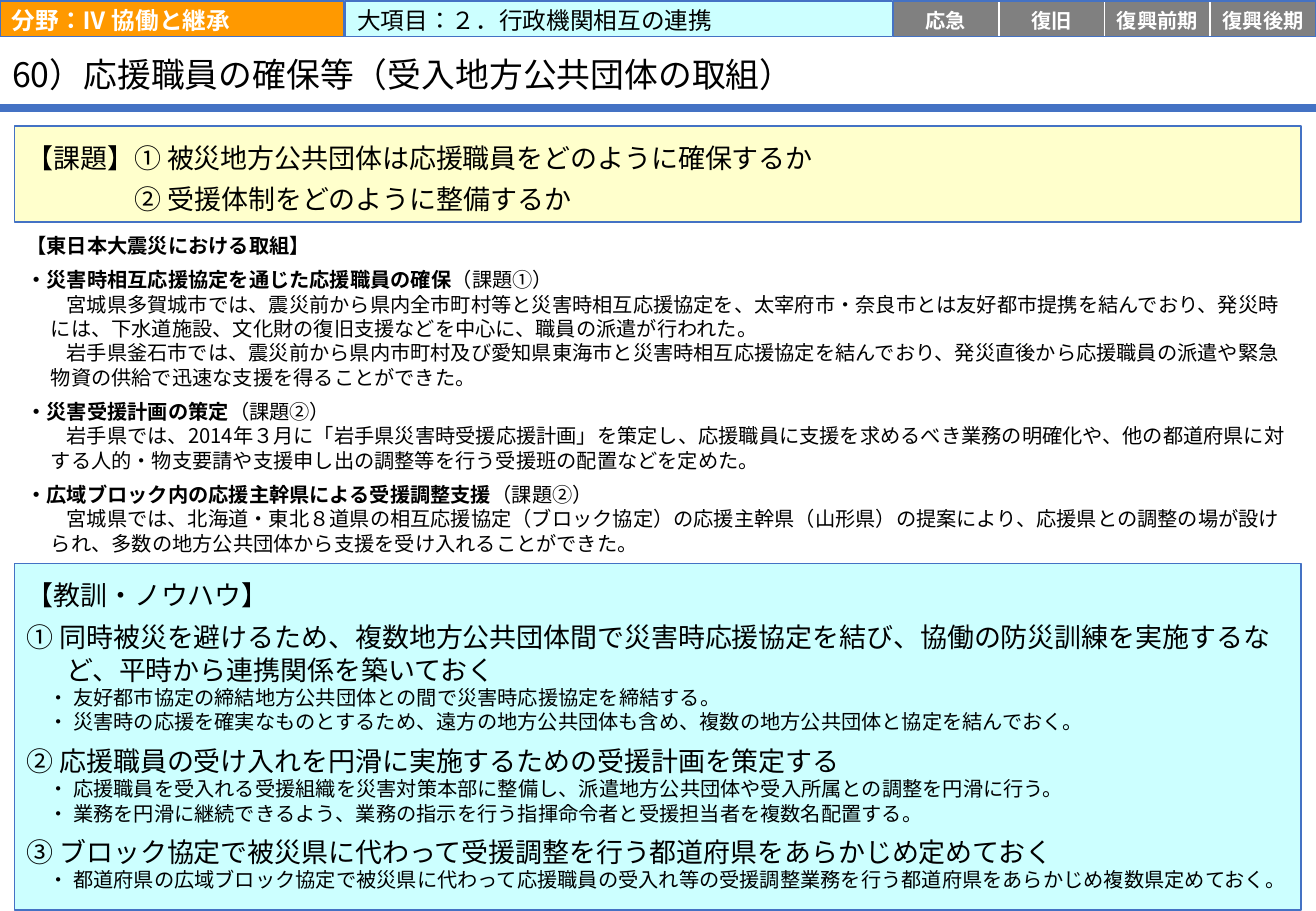
from pptx import Presentation, util as u
from pptx.dml.color import RGBColor
from pptx.enum import lang, shapes, text
from pptx.oxml.ns import qn
from lxml import etree

BLUE = RGBColor(0x44, 0x72, 0xC4)
ORANGE = RGBColor(0xFF, 0x99, 0x00)
CYAN = RGBColor(0xCC, 0xFF, 0xFF)
YELLOW = RGBColor(0xFF, 0xFF, 0xCC)
GRAY = RGBColor(0x80, 0x80, 0x80)
WHITE = RGBColor(0xFF, 0xFF, 0xFF)
BLACK = RGBColor(0, 0, 0)
LATIN, CJK = "Calibri", "Noto Sans CJK JP"

BAR_Y, BAR_H = 0.13, 3.87
BOX_X, BOX_W = 1.11, 97.78
PHASE_X = 67.87
PHASES = ["応急", "復旧", "復興前期", "復興後期"]

ISSUES = [
    ("【課題】① 被災地方公共団体は応援職員をどのように確保するか", 0),
    ("② 受援体制をどのように整備するか", 0.89),
]
EFFORTS = [
    ("・災害時相互応援協定を通じた応援職員の確保", "（課題①）", [
        "宮城県多賀城市では、震災前から県内全市町村等と災害時相互応援協定を、太宰府市・奈良市とは友好都市提携を結んでおり、発災時には、下水道施設、文化財の復旧支援などを中心に、職員の派遣が行われた。",
        "岩手県釜石市では、震災前から県内市町村及び愛知県東海市と災害時相互応援協定を結んでおり、発災直後から応援職員の派遣や緊急物資の供給で迅速な支援を得ることができた。",
    ]),
    ("・災害受援計画の策定", "（課題②）", [
        "岩手県では、2014年３月に「岩手県災害時受援応援計画」を策定し、応援職員に支援を求めるべき業務の明確化や、他の都道府県に対する人的・物支要請や支援申し出の調整等を行う受援班の配置などを定めた。",
    ]),
    ("・広域ブロック内の応援主幹県による受援調整支援", "（課題②）", [
        "宮城県では、北海道・東北８道県の相互応援協定（ブロック協定）の応援主幹県（山形県）の提案により、応援県との調整の場が設けられ、多数の地方公共団体から支援を受け入れることができた。",
    ]),
]
LESSONS = [
    ("① 同時被災を避けるため、複数地方公共団体間で災害時応援協定を結び、協働の防災訓練を実施するなど、平時から連携関係を築いておく", [
        "・ 友好都市協定の締結地方公共団体との間で災害時応援協定を締結する。",
        "・ 災害時の応援を確実なものとするため、遠方の地方公共団体も含め、複数の地方公共団体と協定を結んでおく。",
    ]),
    ("② 応援職員の受け入れを円滑に実施するための受援計画を策定する", [
        "・ 応援職員を受入れる受援組織を災害対策本部に整備し、派遣地方公共団体や受入所属との調整を円滑に行う。",
        "・ 業務を円滑に継続できるよう、業務の指示を行う指揮命令者と受援担当者を複数名配置する。",
    ]),
    ("③ ブロック協定で被災県に代わって受援調整を行う都道府県をあらかじめ定めておく", [
        "・ 都道府県の広域ブロック協定で被災県に代わって応援職員の受入れ等の受援調整業務を行う都道府県をあらかじめ複数県定めておく。",
    ]),
]


class Sheet:
    """Style and current slide, with positions in percent of the slide size."""

    def __init__(self, prs):
        self.prs = prs
        self.s = prs.slides.add_slide(prs.slide_layouts[5])

    def x(self, share):
        return round(self.prs.slide_width * share / 100)

    def y(self, share):
        return round(self.prs.slide_height * share / 100)

    def area(self, x, y, w, h):
        return self.x(x), self.y(y), self.x(w), self.y(h)

    def frame(self, sp, insets, anchor=text.MSO_ANCHOR.MIDDLE):
        tf = sp.text_frame
        tf.word_wrap = True
        tf.auto_size = text.MSO_AUTO_SIZE.NONE
        tf.vertical_anchor = anchor
        tf.margin_left, tf.margin_top, tf.margin_right, tf.margin_bottom = map(u.Inches, insets)
        return tf

    def title(self, words, x, y, w, h):
        sp = self.s.shapes.title
        sp.left, sp.top, sp.width, sp.height = self.area(x, y, w, h)
        tf = self.frame(sp, (0.1, 0.04, 0.1, 0))
        self.para(tf, [words], 20, spacing=0.9)

    def rule(self, y):
        sp = self.s.shapes.add_connector(
            shapes.MSO_CONNECTOR.STRAIGHT, 0, self.y(y), self.x(100), self.y(y))
        sp.line.color.rgb = BLUE
        sp.line.width = u.Pt(4.5)
        etree.SubElement(sp._element.spPr, qn("a:effectLst"))

    def box(self, x, y, w, h, fill=None, line=BLUE, insets=(0.1, 0.05, 0.1, 0.05),
            anchor=text.MSO_ANCHOR.MIDDLE):
        sp = self.s.shapes.add_shape(shapes.MSO_SHAPE.RECTANGLE, *self.area(x, y, w, h))
        sp.shadow.inherit = False
        if fill is None:
            sp.fill.background()
        else:
            sp.fill.solid()
            sp.fill.fore_color.rgb = fill
        if line is None:
            sp.line.fill.background()
        else:
            sp.line.color.rgb = line
            sp.line.width = u.Pt(1)
        return self.frame(sp, insets, anchor)

    def para(self, tf, words, size, font=CJK, color=BLACK, bold=False, align=text.PP_ALIGN.LEFT,
             before=0, spacing=None, left=0, first=0):
        p = tf.paragraphs[0]
        if p.runs:
            p = tf.add_paragraph()
        p.alignment = align
        p.space_before = u.Pt(before)
        if spacing:
            p.line_spacing = spacing
        pPr = p._p.get_or_add_pPr()
        pPr.set("marL", str(u.Inches(left)))
        pPr.set("indent", str(u.Inches(first)))
        p.font.size = u.Pt(size)
        p.font.bold = bold
        p.font.color.rgb = color
        p.font.name = font
        etree.SubElement(pPr.find(qn("a:defRPr")), qn("a:ea"), typeface=CJK)
        for word in words:
            r = p.add_run()
            r.text = word
            r.font.language_id = lang.MSO_LANGUAGE_ID.JAPANESE
        return p

    def label(self, words, x, w, fill, color, size=14, bold=True, line=BLUE, side=0.1,
              align=text.PP_ALIGN.LEFT):
        tf = self.box(x, BAR_Y, w, BAR_H, fill, line, (side, 0.02, side, 0))
        self.para(tf, [words], size, LATIN, color, bold, align)


def main():
    prs = Presentation()
    prs.slide_width, prs.slide_height = u.Inches(10.83), u.Inches(7.5)
    sheet = Sheet(prs)
    sheet.rule(11.87)
    sheet.title("60）応援職員の確保等（受入地方公共団体の取組）", 0, 4.27, 87.53, 7.73)

    tf = sheet.box(BOX_X, 25.07, BOX_W, 36.4, WHITE, None)
    sheet.para(tf, ["【東日本大震災における取組】"], 12, LATIN, bold=True)
    for heading, issue, details in EFFORTS:
        p = sheet.para(tf, [heading, issue], 12, LATIN, bold=True, before=6)
        p.runs[1].font.bold = False
        for detail in details:
            sheet.para(tf, [detail], 12, left=0.2, first=0.13)

    sheet.label("分野：Ⅳ 協働と継承", 0, 26.13, ORANGE, WHITE)
    sheet.label("大項目：２．行政機関相互の連携", 26.22, 41.83, CYAN, BLACK, bold=False)

    tf = sheet.box(BOX_X, 13.87, BOX_W, 10.53, YELLOW, insets=(0.1, 0.12, 0.1, 0.12))
    for issue, left in ISSUES:
        sheet.para(tf, [issue], 16, spacing=u.Pt(24), left=left)

    tf = sheet.box(BOX_X, 61.87, BOX_W, 38, CYAN, insets=(0.1, 0.12, 0.1, 0),
                   anchor=text.MSO_ANCHOR.TOP)
    sheet.para(tf, ["【教訓・ノウハウ】"], 16)
    for lesson, tips in LESSONS:
        sheet.para(tf, [lesson], 16, before=6, left=0.33, first=-0.33)
        for tip in tips:
            sheet.para(tf, [tip], 12, left=0.41, first=-0.23)

    phase_w = (100 - PHASE_X) / len(PHASES)
    for i, phase in enumerate(PHASES):
        sheet.label(phase, PHASE_X + i * phase_w, phase_w, GRAY, WHITE, 12,
                    line=WHITE, side=0, align=text.PP_ALIGN.CENTER)
    sheet.box(PHASE_X, BAR_Y, 100 - PHASE_X, BAR_H)
    prs.save("out.pptx")


if __name__ == "__main__":
    main()
